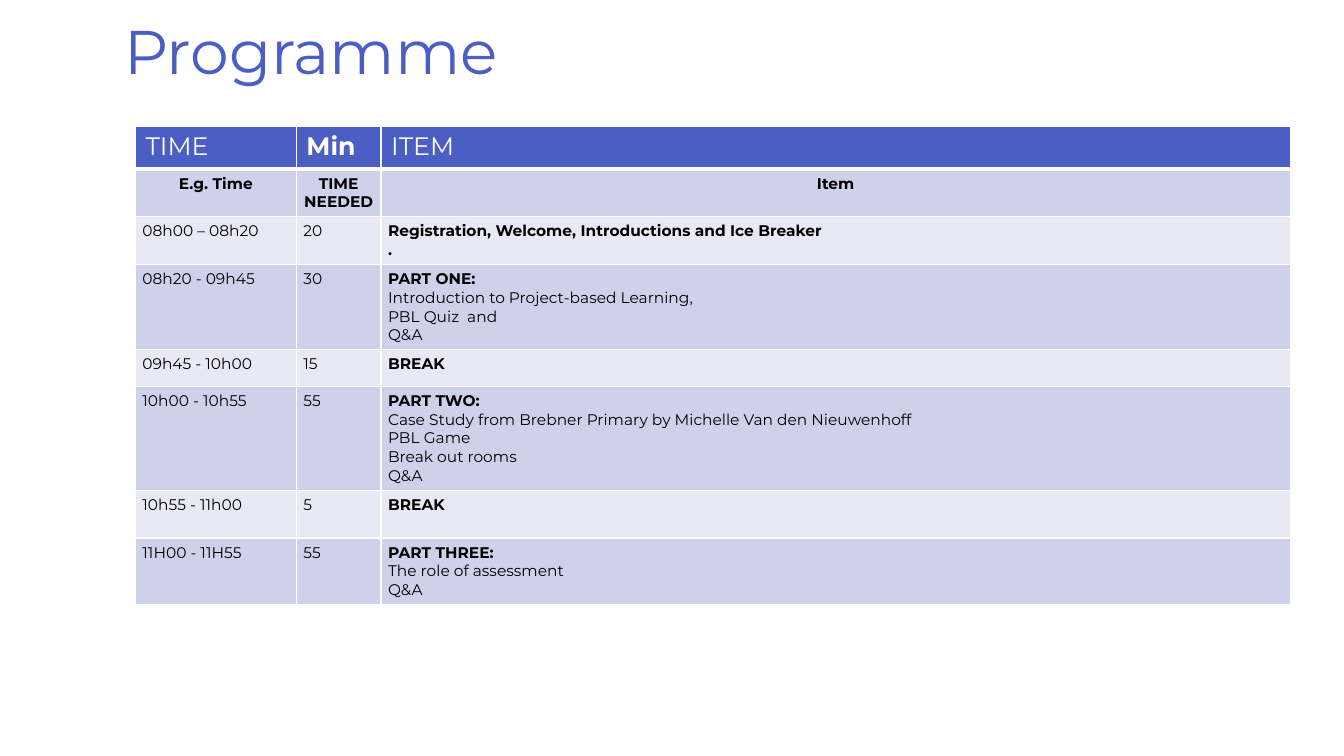
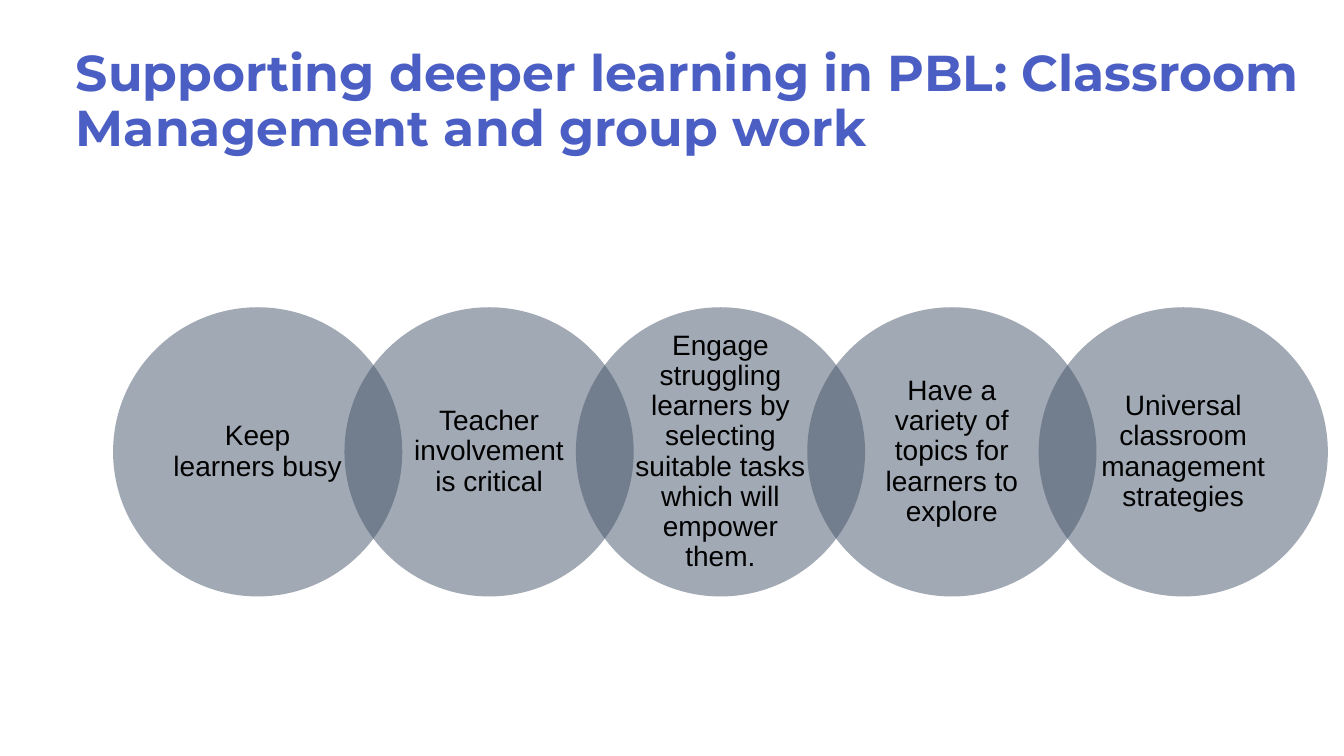
from lxml.etree import SubElement as Sub
from pptx import Presentation as Deck
from pptx.dml.color import RGBColor as Rgb
from pptx.enum.shapes import MSO_SHAPE as Form
from pptx.enum.text import MSO_ANCHOR as Anchor, MSO_AUTO_SIZE as Fit, PP_ALIGN as Align
from pptx.oxml.ns import qn
from pptx.util import Pt

HUE = {
    "blue": "4B5EC4", "white": "FFFFFF", "black": "000000",
    "band": "CED1EA", "pale": "E8E9F5", "slate": "44546A",
}
FONT = "Montserrat"


def paint(fill, hue):
    fill.solid()
    fill.fore_color.rgb = Rgb.from_string(HUE[hue])


def write(frame, text, size=11, hue="black", font=FONT, bold=False, plain=(),
          align=Align.LEFT, space=None):
    """Write the lines of text, then the plain lines in regular weight."""
    lines = [(line, bold) for line in text.split("\n")]
    lines += [(line, False) for line in plain]
    for i, (line, heavy) in enumerate(lines):
        para = frame.add_paragraph() if i else frame.paragraphs[0]
        para.alignment = align
        if space:
            para.line_spacing = space
        run = para.add_run()
        run.text = line
        run.font.name, run.font.size, run.font.bold = font, Pt(size), heavy
        run.font.color.rgb = Rgb.from_string(HUE[hue])


def pad(frame, side, top):
    frame.margin_left = frame.margin_right = Pt(side)
    frame.margin_top = frame.margin_bottom = Pt(top)


class Show:
    def __init__(self):
        self.deck = Deck()
        self.deck.slide_width, self.deck.slide_height = Pt(960), Pt(540)
        self.slide = None

    def page(self, title, box, size, bold=False, anchor=Anchor.MIDDLE, top=3.6):
        self.slide = self.deck.slides.add_slide(self.deck.slide_layouts[5])
        head = self.slide.shapes.title
        head.left, head.top, head.width, head.height = map(Pt, box)
        frame = head.text_frame
        frame.word_wrap, frame.auto_size = True, Fit.NONE
        frame.vertical_anchor = anchor
        pad(frame, 7.2, top)
        write(frame, title, size=size, hue="blue", bold=bold, space=0.9)

    def grid(self, left, top, wide, high):
        shape = self.slide.shapes.add_table(
            len(high), len(wide), Pt(left), Pt(top), Pt(sum(wide)), Pt(sum(high)))
        table = shape.table
        table.horz_banding = False
        for col, size in zip(table.columns, wide):
            col.width = Pt(size)
        for row, size in zip(table.rows, high):
            row.height = Pt(size)
        return table

    def cell(self, cell, text, fill, side=5, base=1, **style):
        # White rules on all four sides
        props = cell._tc.get_or_add_tcPr()
        for edge, width in (("L", 1), ("R", 1), ("T", 1), ("B", base)):
            rule = Sub(props, qn("a:ln" + edge), w=str(Pt(width)))
            Sub(Sub(rule, qn("a:solidFill")), qn("a:srgbClr"), val=HUE["white"])
        paint(cell.fill, fill)
        pad(cell, side, 3.6)
        write(cell.text_frame, text, **style)

    def disc(self, text, left, top, size):
        shape = self.slide.shapes.add_shape(
            Form.OVAL, Pt(left), Pt(top), Pt(size), Pt(size))
        shape.shadow.inherit = False
        paint(shape.fill, "slate")
        tint = shape._element.spPr.find(".//" + qn("a:srgbClr"))
        Sub(tint, qn("a:alpha"), val="50000")
        shape.line.fill.background()
        frame = shape.text_frame
        frame.word_wrap = True
        frame.vertical_anchor = Anchor.MIDDLE
        pad(frame, 11.5, 2)
        write(frame, text, size=20, font="Arial", align=Align.CENTER, space=0.9)


# Time, minutes, bold lines, plain lines
PLAN = [
    ("08h00 – 08h20", "20", "Registration, Welcome, Introductions and Ice Breaker\n.", ()),
    ("08h20 - 09h45", "30", "PART ONE:",
     ("Introduction to Project-based Learning,", "PBL Quiz  and", "Q&A")),
    ("09h45 - 10h00", "15", "BREAK", ()),
    ("10h00 - 10h55", "55", "PART TWO:",
     ("Case Study from Brebner Primary by Michelle Van den Nieuwenhoff",
      "PBL Game", "Break out rooms", "Q&A")),
    ("10h55 - 11h00", "5", "BREAK", ()),
    ("11H00 - 11H55", "55", "PART THREE:", ("The role of assessment", "Q&A")),
]
TIPS = [
    "Keep learners busy",
    "Teacher involvement is critical",
    "Engage struggling learners by selecting suitable tasks which will empower them.",
    "Have a variety of topics for learners to explore",
    "Universal classroom management strategies",
]


def agenda(show):
    show.page("Programme", (81.5, 8, 402.5, 62.5), 44, anchor=Anchor.TOP, top=7.2)
    table = show.grid(96.75, 90.25, (115, 60.5, 649.5),
                      (30.5, 34, 34, 61, 26, 74, 34, 47.5))
    # Two heading rows
    for col, (name, note) in enumerate(
            (("TIME", "E.g. Time"), ("Min", "TIME NEEDED"), ("ITEM", "Item"))):
        show.cell(table.cell(0, col), name, "blue", side=7.2, base=3,
                  size=18, hue="white", bold=name == "Min")
        show.cell(table.cell(1, col), note, "band", bold=True, align=Align.CENTER)
    # Sessions in alternating bands
    for row, (time, mins, bold, plain) in enumerate(PLAN, 2):
        fill = "band" if row % 2 else "pale"
        show.cell(table.cell(row, 0), time, fill)
        show.cell(table.cell(row, 1), mins, fill)
        show.cell(table.cell(row, 2), bold, fill, bold=True, plain=plain)


def tips(show):
    show.page("Supporting deeper learning in PBL: Classroom Management and group work",
              (47, 29, 913, 88.5), 36, bold=True)
    # Each disc overlaps the one before by a fifth
    size = 206.6
    for i, tip in enumerate(TIPS):
        show.disc(tip, 80.8 + i * size * 0.8, 219.5, size)


def main():
    show = Show()
    agenda(show)
    tips(show)
    show.deck.save("out.pptx")


if __name__ == "__main__":
    main()
